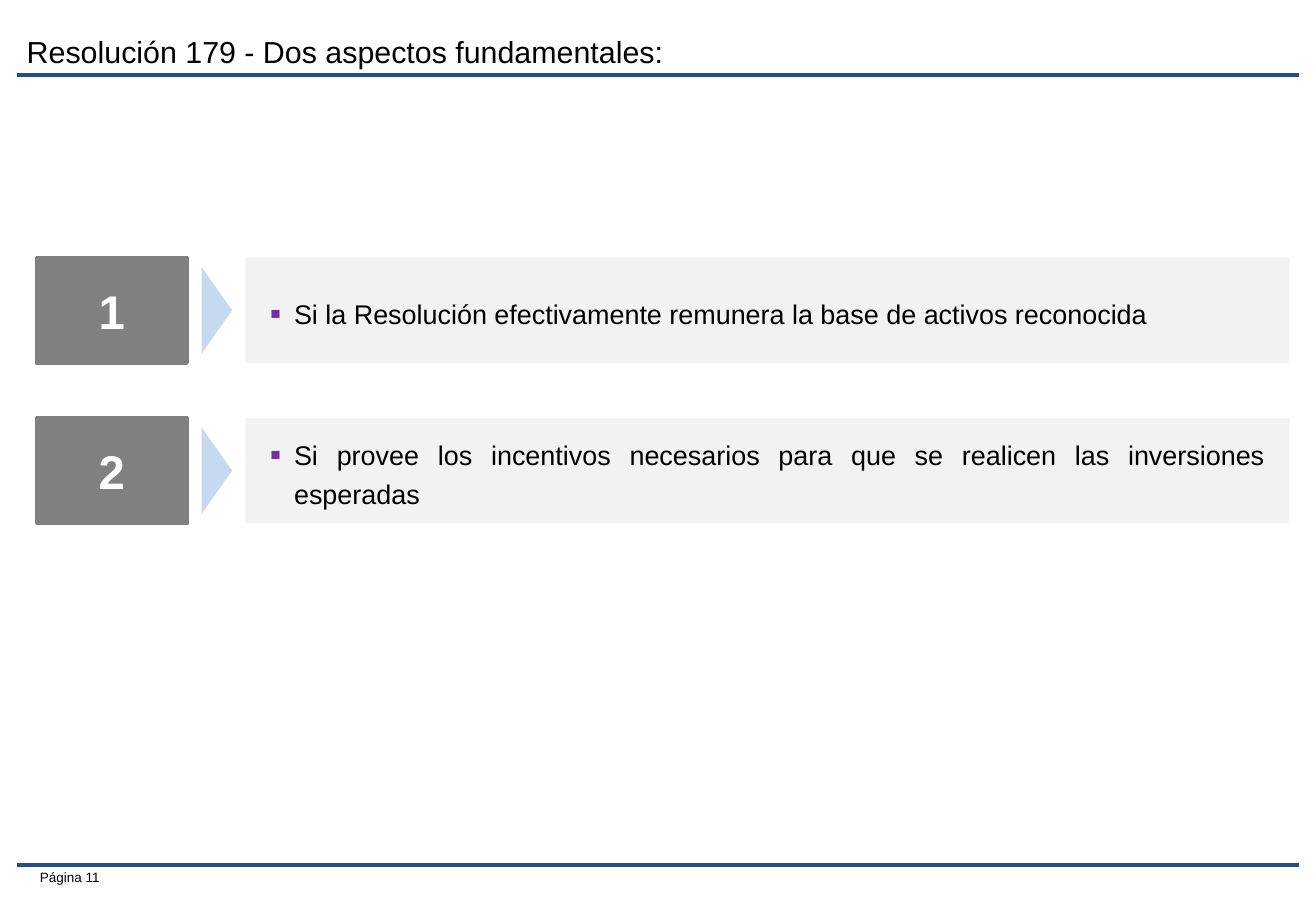
from lxml.etree import SubElement
from pptx import Presentation
from pptx.dml.color import RGBColor
from pptx.enum.shapes import MSO_CONNECTOR, MSO_SHAPE
from pptx.enum.text import MSO_ANCHOR as ANCHOR, MSO_AUTO_SIZE as FIT, PP_ALIGN as ALIGN
from pptx.oxml.ns import qn
from pptx.util import Pt

PX = 9144
FONT = "Arial"
BLACK = RGBColor(0, 0, 0)
WHITE = RGBColor(255, 255, 255)
NAVY = RGBColor(0x26, 0x4E, 0x84)
GREY = RGBColor(0x80, 0x80, 0x80)
PANEL = RGBColor(0xF2, 0xF2, 0xF2)
SKY = RGBColor(0xC6, 0xD9, 0xF1)
PURPLE = RGBColor(0x70, 0x30, 0xA0)

ASPECTS = [
    "Si la Resolución efectivamente remunera la base de activos reconocida",
    "Si provee los incentivos necesarios para que se realicen las inversiones esperadas",
]


def emu(*lengths):
    """Turn px lengths into EMU."""
    return [n * PX for n in lengths]


def write(sp, text, size, color=BLACK, bold=False, align=ALIGN.LEFT,
          anchor=ANCHOR.MIDDLE, insets=(10, 5), spacing=None, after=None, wrap=True):
    """Put one formatted paragraph into a shape and return it."""
    tf = sp.text_frame
    tf.auto_size, tf.word_wrap, tf.vertical_anchor = FIT.NONE, wrap, anchor
    tf.margin_left, tf.margin_top = emu(*insets)
    tf.margin_right, tf.margin_bottom = emu(*insets)
    p = tf.paragraphs[0]
    p.alignment, p.line_spacing, p.space_after = align, spacing, after
    r = p.add_run()
    r.text = text
    r.font.name, r.font.size, r.font.bold = FONT, Pt(size), bold
    r.font.color.rgb = color
    return p


def add_bullet(p, indent):
    """Give a paragraph a purple square bullet with a hanging indent."""
    pPr = p._p.get_or_add_pPr()
    pPr.set("marL", str(indent * PX))
    pPr.set("indent", str(-indent * PX))
    SubElement(SubElement(pPr, qn("a:buClr")), qn("a:srgbClr"), val=str(PURPLE))
    SubElement(pPr, qn("a:buSzPct"), val="120000")
    SubElement(pPr, qn("a:buFont"), typeface=FONT)
    SubElement(pPr, qn("a:buChar"), char="▪")


def add_block(shapes, kind, box, fill, line=None):
    """Add a flat preset shape with an optional outline."""
    sp = shapes.add_shape(kind, *emu(*box))
    sp.shadow.inherit = False
    sp.fill.solid()
    sp.fill.fore_color.rgb = fill
    if line:
        sp.line.color.rgb, sp.line.width = fill, Pt(line)
    else:
        sp.line.fill.background()
    return sp


def add_rule(s, x, y, width):
    """Draw a horizontal navy rule."""
    rule = s.shapes.add_connector(MSO_CONNECTOR.STRAIGHT, *emu(x, y, x + width, y))
    rule.line.color.rgb, rule.line.width = NAVY, Pt(2.25)
    SubElement(rule._element.spPr, qn("a:effectLst"))


def add_header(s, x, y, width, text):
    """Place the title with its rule below."""
    title = s.shapes.title
    title.left, title.top, title.width, title.height = emu(x + 8, y, 916, 50)
    write(title, text, 18, anchor=ANCHOR.TOP, insets=(0, 4), spacing=0.8)
    add_rule(s, x, y + 33, width)


def add_footer(s, x, y, width, text):
    """Place the page label under the footer rule."""
    label = s.shapes.add_textbox(*emu(x, y - 2, 78, 24))
    write(label, text, 8, align=ALIGN.RIGHT, wrap=False)
    add_rule(s, x, y, width)


def add_aspect(s, x, y, width, height, number, text):
    """Build one row: number, pointer and bulleted panel."""
    shapes = s.shapes.add_group_shape().shapes
    badge = add_block(shapes, MSO_SHAPE.RECTANGLE, (x, y, 124, height), GREY, 2)
    write(badge, str(number), 28, WHITE, bold=True, align=ALIGN.CENTER)
    panel = add_block(shapes, MSO_SHAPE.RECTANGLE, (x + 172, y, width - 172, height), PANEL)
    p = write(panel, text, 16, align=ALIGN.JUSTIFY, insets=(20, 12), spacing=1.2, after=Pt(6))
    add_bullet(p, 20)
    pointer = add_block(shapes, MSO_SHAPE.ISOSCELES_TRIANGLE, (x + 113, y + 31, 71, 25), SKY)
    pointer.rotation = 90


def main():
    """Build and save the slide."""
    prs = Presentation()
    prs.slide_width, prs.slide_height = emu(1083, 750)
    s = prs.slides.add_slide(prs.slide_layouts[5])
    add_header(s, 14, 29, 1055, "Resolución 179 - Dos aspectos fundamentales:")
    add_footer(s, 14, 712, 1055, "Página 11")
    for i, text in enumerate(ASPECTS):
        add_aspect(s, 30, 212 + i * 132, 1031, 87, i + 1, text)
    prs.save("out.pptx")


if __name__ == "__main__":
    main()
